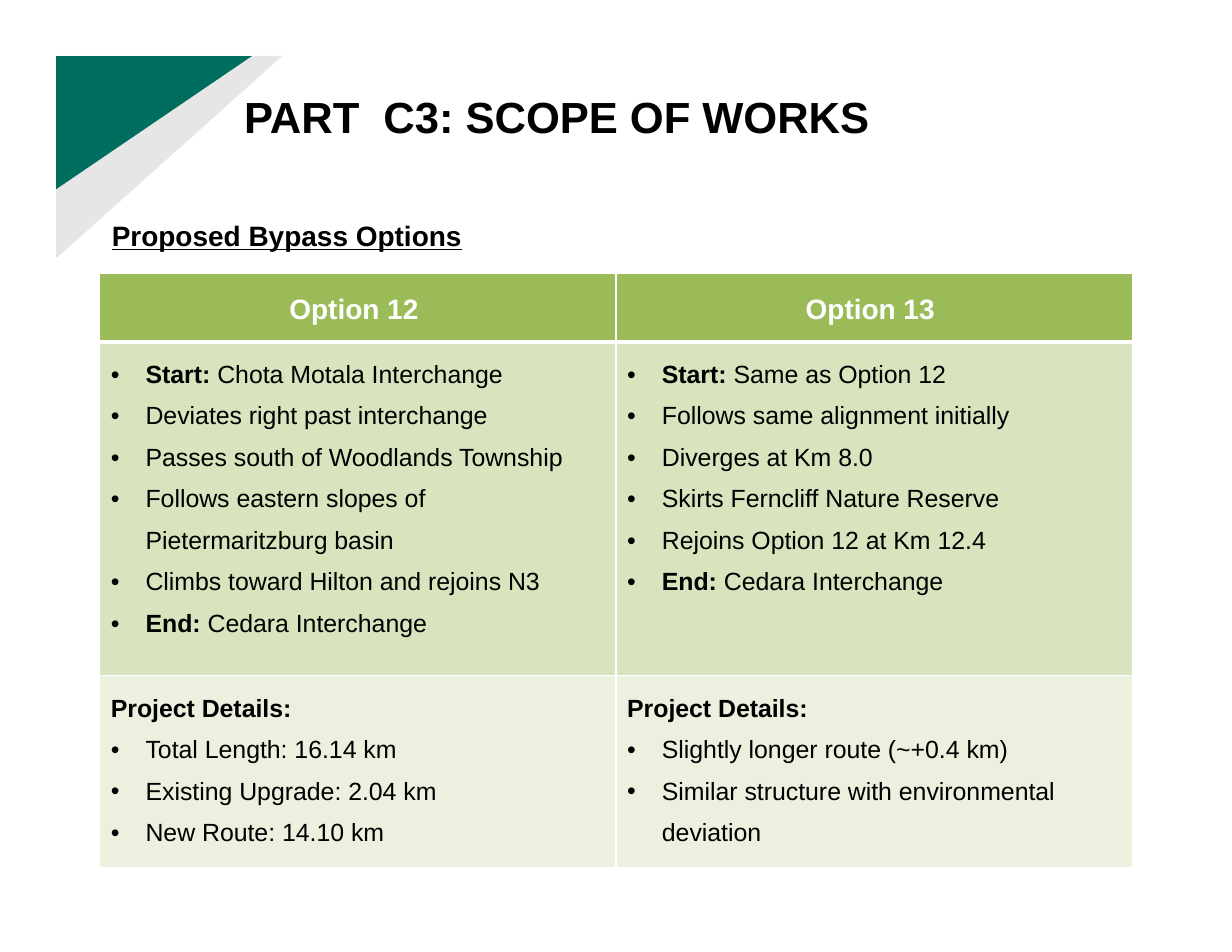
"""Build the slide comparing the two proposed bypass options."""
from dataclasses import dataclass

import pptx
import pptx.dml.color
import pptx.enum.text
import pptx.oxml
import pptx.oxml.ns
import pptx.util
from pptx.util import Inches

BLACK, WHITE = "000000", "FFFFFF"
HEADER_FILL, ROUTE_FILL, DETAIL_FILL = "9BBB59", "D7E4BD", "EBF1DE"


@dataclass
class Line:
    text: str = ""
    lead: str = ""
    bullet: bool = True


@dataclass
class Option:
    name: str
    route: list[Line]
    details: list[Line]


@dataclass
class Corner:
    points: list[tuple[float, float]]
    fill: str


CORNERS = [
    Corner([(0.5, 0.5), (2.52, 0.5), (0.51, 2.3), (0.5, 2.3)], "E6E6E6"),
    Corner([(0.5, 0.5), (2.25, 0.5), (0.5, 1.69)], "006E5E"),
]
DETAILS_HEADING = Line(lead="Project Details:", bullet=False)
END = Line("Cedara Interchange", "End: ")
OPTIONS = [
    Option(
        "Option 12 ",
        [
            Line("Chota Motala Interchange", "Start: "),
            Line("Deviates right past interchange"),
            Line("Passes south of Woodlands Township"),
            Line("Follows eastern slopes of Pietermaritzburg basin"),
            Line("Climbs toward Hilton and rejoins N3"),
            END,
        ],
        [
            DETAILS_HEADING,
            Line("Total Length: 16.14 km"),
            Line("Existing Upgrade: 2.04 km"),
            Line("New Route: 14.10 km"),
        ],
    ),
    Option(
        "Option 13 ",
        [
            Line("Same as Option 12", "Start: "),
            Line("Follows same alignment initially"),
            Line("Diverges at Km 8.0"),
            Line("Skirts Ferncliff Nature Reserve"),
            Line("Rejoins Option 12 at Km 12.4"),
            END,
        ],
        [
            DETAILS_HEADING,
            Line("Slightly longer route (~+0.4 km)"),
            Line("Similar structure with environmental deviation"),
        ],
    ),
]


def rgb(value: str) -> pptx.dml.color.RGBColor:
    return pptx.dml.color.RGBColor.from_string(value)


def set_font(paragraph, size: float, color: str = BLACK, bold: bool | None = None) -> None:
    font = paragraph.font
    font.name = "Arial"
    font.size = pptx.util.Pt(size)
    font.color.rgb = rgb(color)
    if bold is not None:
        font.bold = bold


def draw_corner(slide, corner: Corner) -> None:
    start, *others = [(Inches(x), Inches(y)) for x, y in corner.points]
    builder = slide.shapes.build_freeform(*start)
    builder.add_line_segments(others, close=True)
    triangle = builder.convert_to_shape()
    triangle.shadow.inherit = False
    triangle.fill.solid()
    triangle.fill.fore_color.rgb = rgb(corner.fill)
    triangle.line.fill.background()


def add_bullet(paragraph) -> None:
    properties = paragraph._p.get_or_add_pPr()
    properties.set("marL", str(Inches(0.31)))
    properties.set("indent", str(Inches(-0.31)))
    namespace = pptx.oxml.ns.nsdecls("a")
    for xml in (f'<a:buFont {namespace} typeface="Arial"/>', f'<a:buChar {namespace} char="•"/>'):
        properties.append(pptx.oxml.parse_xml(xml))


def style_cell(cell, fill: str, top: float = 1, bottom: float = 1) -> None:
    cell.fill.solid()
    cell.fill.fore_color.rgb = rgb(fill)
    properties = cell._tc.get_or_add_tcPr()
    widths = {"lnL": 1, "lnR": 1, "lnT": top, "lnB": bottom}
    for position, (side, width) in enumerate(widths.items()):
        border = pptx.oxml.parse_xml(
            f'<a:{side} {pptx.oxml.ns.nsdecls("a")} w="{pptx.util.Pt(width)}">'
            f'<a:solidFill><a:srgbClr val="{WHITE}"/></a:solidFill></a:{side}>'
        )
        properties.insert(position, border)


def write_lines(cell, lines: list[Line]) -> None:
    for index, line in enumerate(lines):
        frame = cell.text_frame
        paragraph = frame.add_paragraph() if index else frame.paragraphs[0]
        if line.bullet:
            add_bullet(paragraph)
        paragraph.line_spacing = 1.5
        set_font(paragraph, 16)
        if line.lead:
            lead = paragraph.add_run()
            lead.text = line.lead
            lead.font.bold = True
        if line.text:
            paragraph.add_run().text = line.text


def draw_options(slide, options: list[Option]) -> None:
    table = slide.shapes.add_table(
        3, len(options), Inches(0.89), Inches(2.44), Inches(9.22), Inches(5.31)
    ).table
    for row, height in zip(table.rows, (0.61, 2.98, 1.72)):
        row.height = Inches(height)
    for column, option in enumerate(options):
        header, route, details = (table.cell(row, column) for row in range(3))
        style_cell(header, HEADER_FILL, bottom=3)
        style_cell(route, ROUTE_FILL, top=3)
        style_cell(details, DETAIL_FILL)
        heading = header.text_frame.paragraphs[0]
        heading.text = option.name
        heading.alignment = pptx.enum.text.PP_ALIGN.CENTER
        heading.line_spacing = 1.5
        set_font(heading, 18, WHITE, True)
        write_lines(route, option.route)
        write_lines(details, option.details)


def write_title(slide, text: str) -> None:
    title = slide.shapes.title
    title.left, title.top = Inches(2.08), Inches(0.75)
    title.width, title.height = Inches(8.03), Inches(0.57)
    frame = title.text_frame
    frame.text = text
    frame.word_wrap = True
    frame.auto_size = pptx.enum.text.MSO_AUTO_SIZE.NONE
    frame.vertical_anchor = pptx.enum.text.MSO_ANCHOR.TOP
    paragraph = frame.paragraphs[0]
    paragraph.alignment = pptx.enum.text.PP_ALIGN.LEFT
    set_font(paragraph, 28, bold=True)


def write_subheading(slide, text: str) -> None:
    frame = slide.shapes.add_textbox(
        Inches(0.9), Inches(1.75), Inches(6.5), Inches(0.5)
    ).text_frame
    frame.word_wrap = True
    paragraph = frame.paragraphs[0]
    paragraph.text = text
    paragraph.line_spacing = 1.5
    set_font(paragraph, 18, bold=True)
    paragraph.font.underline = True


def main() -> None:
    deck = pptx.Presentation()
    deck.slide_width, deck.slide_height = Inches(11), Inches(8.5)
    slide = deck.slides.add_slide(deck.slide_layouts[5])
    for corner in CORNERS:
        draw_corner(slide, corner)
    write_title(slide, "PART  C3: SCOPE OF WORKS")
    draw_options(slide, OPTIONS)
    write_subheading(slide, "Proposed Bypass Options")
    deck.save("out.pptx")


if __name__ == "__main__":
    main()
